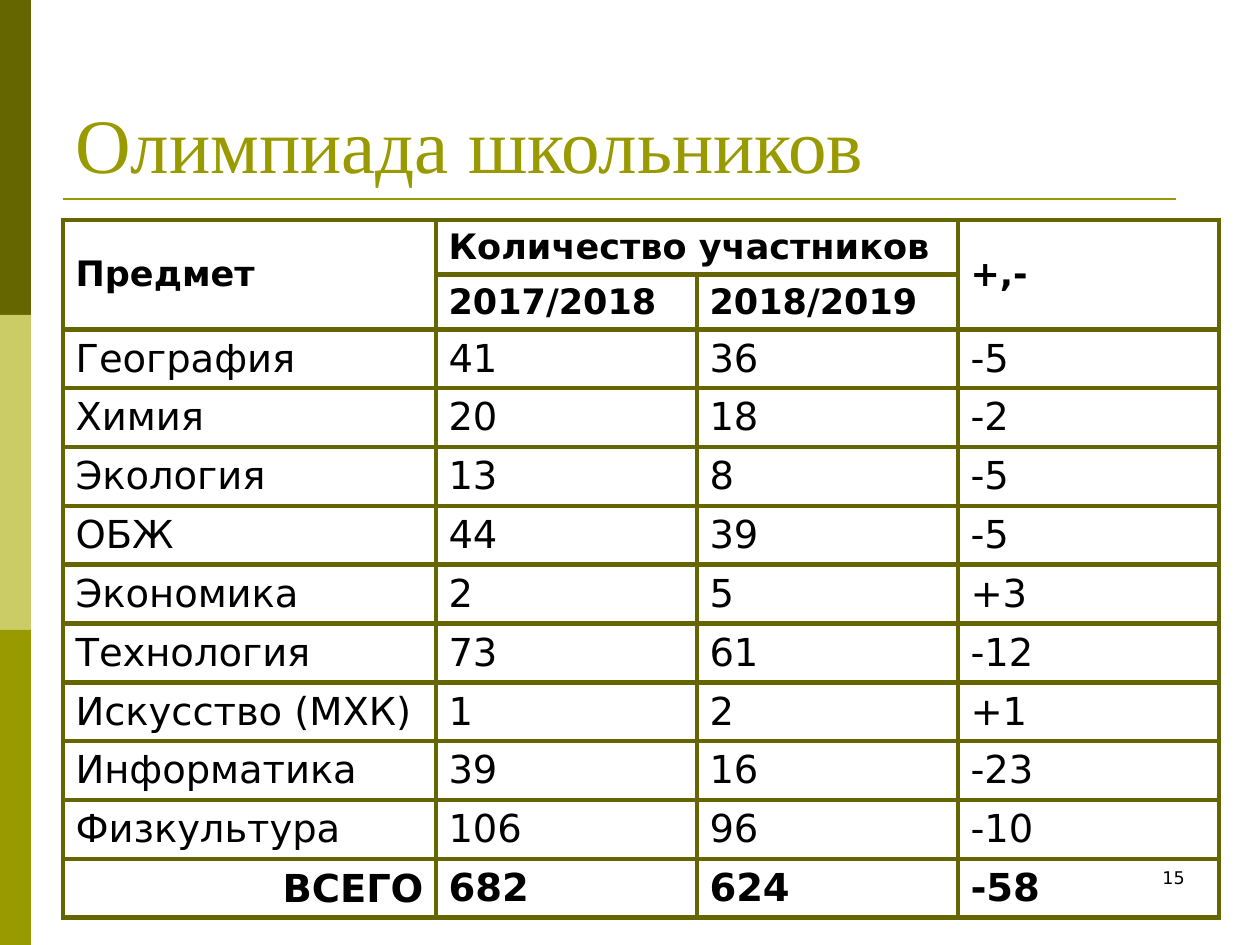
from lxml import etree
from pptx import Presentation
from pptx.dml.color import RGBColor
from pptx.enum.shapes import MSO_CONNECTOR, MSO_SHAPE
from pptx.enum.text import MSO_ANCHOR, PP_ALIGN
from pptx.oxml.ns import qn
from pptx.util import Emu, Pt

DARK_OLIVE = RGBColor(0x66, 0x66, 0x00)
PALE_OLIVE = RGBColor(0xCC, 0xCC, 0x66)
OLIVE = RGBColor(0x99, 0x99, 0x00)
BLACK = RGBColor(0x00, 0x00, 0x00)

BODY_FONT = "DejaVu Sans"
TITLE_FONT = "Times New Roman"
RECTANGLE = MSO_SHAPE.RECTANGLE
STRAIGHT = MSO_CONNECTOR.STRAIGHT
TOP, MIDDLE, BOTTOM = MSO_ANCHOR.TOP, MSO_ANCHOR.MIDDLE, MSO_ANCHOR.BOTTOM
LEFT, RIGHT = PP_ALIGN.LEFT, PP_ALIGN.RIGHT

PX_PER_INCH = 126
WIDTH, HEIGHT = 1260, 945

HEADER = [
    ["Предмет", "Количество участников", "", "+,-"],
    ["", "2017/2018", "2018/2019", ""],
]
SUBJECTS = [
    ["География", "41", "36", "-5"],
    ["Химия", "20", "18", "-2"],
    ["Экология", "13", "8", "-5"],
    ["ОБЖ", "44", "39", "-5"],
    ["Экономика", "2", "5", "+3"],
    ["Технология", "73", "61", "-12"],
    ["Искусство (МХК)", "1", "2", "+1"],
    ["Информатика", "39", "16", "-23"],
    ["Физкультура", "106", "96", "-10"],
]
TOTAL = ["ВСЕГО", "682", "624", "-58"]
MERGES = [((0, 0), (1, 0)), ((0, 1), (0, 2)), ((0, 3), (1, 3))]
COLUMN_WIDTHS = [373, 261, 261, 261]
HEADER_HEIGHT, ROW_HEIGHT = 54, 57


def px(length):
    return Emu(round(length * 914400 / PX_PER_INCH))


class OliveSlide:
    def __init__(self, prs):
        self.slide = prs.slides.add_slide(prs.slide_layouts[6])
        self.shapes = self.slide.shapes

    def bar(self, x, y, w, h, color):
        sp = self.shapes.add_shape(RECTANGLE, px(x), px(y), px(w), px(h))
        sp.shadow.inherit = False
        sp.fill.solid()
        sp.fill.fore_color.rgb = color
        sp.line.fill.background()

    def rule(self, x1, x2, y, color, width):
        line = self.shapes.add_connector(STRAIGHT, px(x1), px(y), px(x2), px(y))
        line.line.color.rgb = color
        line.line.width = Pt(width)
        etree.SubElement(line._element.spPr, qn("a:effectLst"))

    def style(self, p, size, color=BLACK, font=BODY_FONT, bold=False, align=LEFT):
        p.alignment = align
        p.font.size = Pt(size)
        p.font.name = font
        p.font.bold = bold
        p.font.color.rgb = color

    def text(self, x, y, w, h, text, size, anchor=TOP, **style):
        tf = self.shapes.add_textbox(px(x), px(y), px(w), px(h)).text_frame
        tf.word_wrap = True
        tf.vertical_anchor = anchor
        tf.text = text
        self.style(tf.paragraphs[0], size, **style)

    def borders(self, cell, color, width):
        tc_pr = cell._tc.get_or_add_tcPr()
        for side in ("a:lnL", "a:lnR", "a:lnT", "a:lnB"):
            ln = etree.SubElement(tc_pr, qn(side), w=str(Pt(width)))
            fill = etree.SubElement(ln, qn("a:solidFill"))
            etree.SubElement(fill, qn("a:srgbClr"), val=str(color))

    def table(self, x, y, rows, widths, heights, merges):
        frame = self.shapes.add_table(len(rows), len(widths), px(x), px(y),
                                      px(sum(widths)), px(sum(heights)))
        table = frame.table
        table.first_row = table.horz_banding = False
        for column, width in zip(table.columns, widths):
            column.width = px(width)
        for row, height in zip(table.rows, heights):
            row.height = px(height)
        for start, end in merges:
            table.cell(*start).merge(table.cell(*end))

        last = len(rows) - 1
        for i, values in enumerate(rows):
            header = i < len(HEADER)
            for j, value in enumerate(values):
                cell = table.cell(i, j)
                self.borders(cell, DARK_OLIVE, 3)
                cell.fill.background()
                if cell.is_spanned:
                    continue
                total_label = i == last and j == 0
                cell.vertical_anchor = BOTTOM if total_label else MIDDLE
                cell.text = value
                self.style(cell.text_frame.paragraphs[0], 20 if header else 22,
                           bold=header or i == last,
                           align=RIGHT if total_label else LEFT)


def main():
    prs = Presentation()
    prs.slide_width, prs.slide_height = px(WIDTH), px(HEIGHT)
    s = OliveSlide(prs)

    bar_height = HEIGHT // 3
    for i, color in enumerate((DARK_OLIVE, PALE_OLIVE, OLIVE)):
        s.bar(0, i * bar_height, 31, bar_height, color)
    s.rule(63, 1176, 199, OLIVE, 1.5)
    s.text(63, 38, 1134, 157, "Олимпиада школьников", 44, anchor=BOTTOM,
           color=OLIVE, font=TITLE_FONT)

    rows = HEADER + SUBJECTS + [TOTAL]
    heights = [HEADER_HEIGHT] * len(HEADER) + [ROW_HEIGHT] * (len(SUBJECTS) + 1)
    s.table(63, 220, rows, COLUMN_WIDTHS, heights, MERGES)
    s.text(903, 861, 294, 63, "15", 10, align=RIGHT)

    prs.save("out.pptx")


if __name__ == "__main__":
    main()
